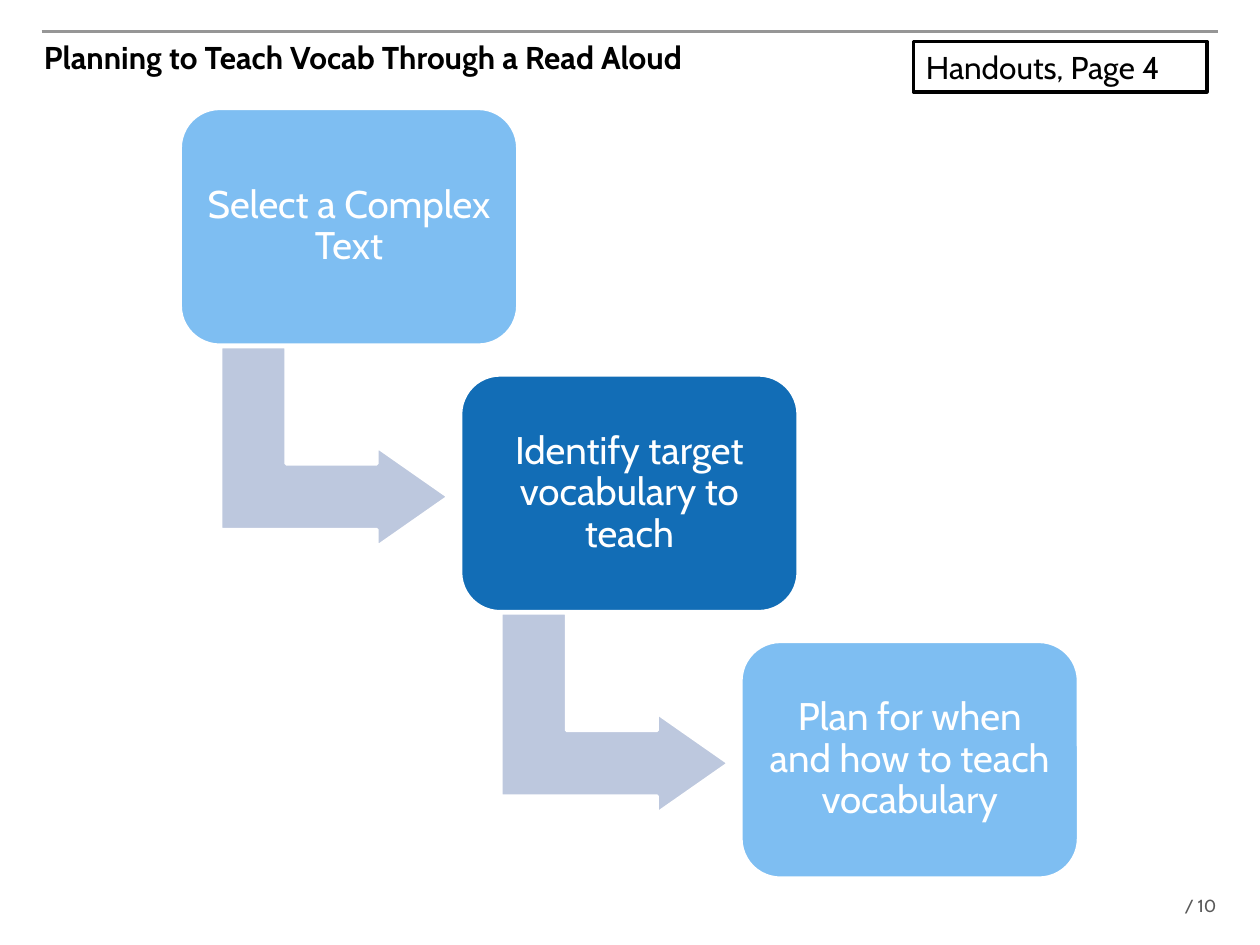
from dataclasses import dataclass

from pptx import Presentation
from pptx.dml.color import RGBColor
from pptx.enum.shapes import MSO_CONNECTOR, MSO_SHAPE
from pptx.enum.text import MSO_ANCHOR, PP_ALIGN
from pptx.oxml.ns import qn
from pptx.util import Inches, Pt
from lxml import etree

CARD, ARROW, BOX = MSO_SHAPE.ROUNDED_RECTANGLE, MSO_SHAPE.BENT_UP_ARROW, MSO_SHAPE.RECTANGLE
STRAIGHT = MSO_CONNECTOR.STRAIGHT
LEFT, CENTER = PP_ALIGN.LEFT, PP_ALIGN.CENTER
TOP, MIDDLE = MSO_ANCHOR.TOP, MSO_ANCHOR.MIDDLE


@dataclass(frozen=True)
class Theme:
    font: str = "Cabin"
    black: str = "000000"
    white: str = "FFFFFF"
    rule: str = "969696"
    page: str = "595959"
    light: str = "7EBEF2"
    dark: str = "126DB6"
    arrow: str = "BDC8DE"
    heading_size: int = 18
    step_size: int = 22
    page_size: int = 10
    line_width: int = 2


THEME = Theme()
STEPS = [
    ("Select a Complex Text", THEME.light),
    ("Identify target vocabulary to teach", THEME.dark),
    ("Plan for when and how to teach vocabulary", THEME.light),
]
FIRST_LEFT, FIRST_TOP = 1.43, 0.86
STEP_RIGHT, STEP_DOWN = 2.225, 2.115
CARD_WIDTH, CARD_HEIGHT = 2.68, 1.88


def color(value):
    return RGBColor.from_string(value)


def write(frame, text, size, ink, bold=False, align=LEFT, anchor=TOP):
    frame.word_wrap = True
    frame.vertical_anchor = anchor
    frame.text = text
    paragraph = frame.paragraphs[0]
    paragraph.alignment = align
    font = paragraph.runs[0].font
    font.name, font.size, font.bold = THEME.font, Pt(size), bold
    font.color.rgb = color(ink)


def set_margins(frame, inset):
    frame.margin_left = frame.margin_right = Inches(inset)
    frame.margin_top = frame.margin_bottom = Inches(inset)


def add_label(slide, bounds, text, size, ink, bold=False):
    label = slide.shapes.add_textbox(*map(Inches, bounds))
    write(label.text_frame, text, size, ink, bold)
    return label


def add_outlined(slide, kind, bounds, fill, line, adjustments=()):
    shape = slide.shapes.add_shape(kind, *map(Inches, bounds))
    shape.shadow.inherit = False
    shape.fill.solid()
    shape.fill.fore_color.rgb = color(fill)
    shape.line.color.rgb = color(line)
    shape.line.width = Pt(THEME.line_width)
    for index, value in enumerate(adjustments):
        shape.adjustments[index] = value
    return shape


def add_rule(slide):
    rule = slide.shapes.add_connector(STRAIGHT, Inches(0.33), Inches(0.25), Inches(9.67), Inches(0.25))
    rule.line.color.rgb = color(THEME.rule)
    rule.line.width = Pt(THEME.line_width)
    etree.SubElement(rule.element.spPr, qn("a:effectLst"))


def add_step_arrow(slide, left, top):
    bounds = (left + 0.43, top + 1.78, 1.59, 1.81)
    arrow = add_outlined(slide, ARROW, bounds, THEME.arrow, THEME.white, (0.328, 0.25, 0.358))
    arrow.rotation = 90


def add_step_card(slide, left, top, text, fill):
    bounds = (left, top, CARD_WIDTH, CARD_HEIGHT)
    card = add_outlined(slide, CARD, bounds, fill, THEME.white, (0.167,))
    set_margins(card.text_frame, 0.09)
    write(card.text_frame, text, THEME.step_size, THEME.white, align=CENTER, anchor=MIDDLE)
    card.text_frame.paragraphs[0].line_spacing = 0.9


def add_steps(slide):
    for index, (text, fill) in enumerate(STEPS):
        left = FIRST_LEFT + index * STEP_RIGHT
        top = FIRST_TOP + index * STEP_DOWN
        if index < len(STEPS) - 1:
            add_step_arrow(slide, left, top)
        add_step_card(slide, left, top, text, fill)


def main():
    deck = Presentation()
    deck.slide_width, deck.slide_height = Inches(10), Inches(7.5)
    slide = deck.slides.add_slide(deck.slide_layouts[6])
    page = add_label(slide, (9.37, 7.1, 0.66, 0.17), " / 10", THEME.page_size, THEME.page)
    set_margins(page.text_frame, 0)
    add_rule(slide)
    add_label(slide, (0.25, 0.25, 9.32, 0.92), "Planning to Teach Vocab Through a Read Aloud",
              THEME.heading_size, THEME.black, bold=True)
    add_steps(slide)
    handout = add_outlined(slide, BOX, (7.25, 0.33, 2.33, 0.4), THEME.white, THEME.black)
    write(handout.text_frame, "Handouts, Page 4", THEME.heading_size, THEME.black)
    deck.save("out.pptx")


if __name__ == "__main__":
    main()
